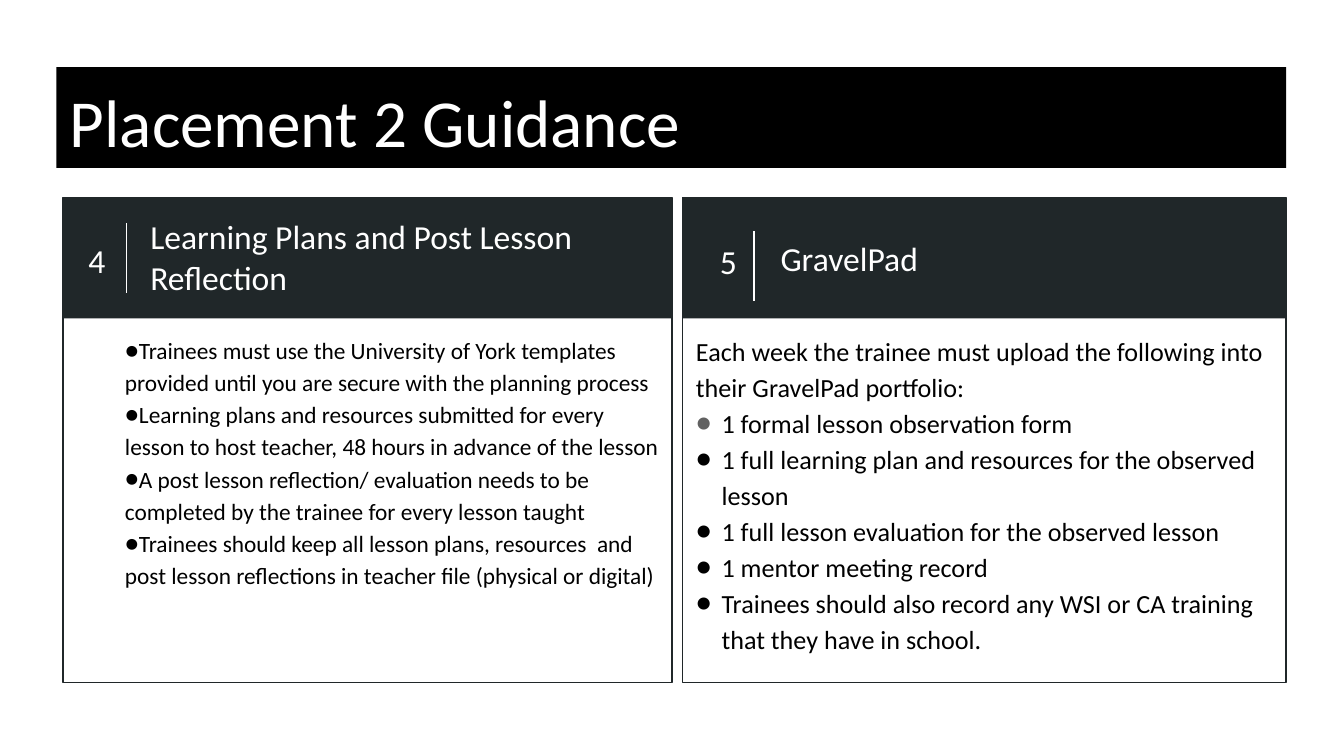
import pptx
import pptx.dml.color
import pptx.enum.shapes
import pptx.enum.text
import pptx.oxml.ns
import pptx.util
from lxml import etree
from pptx.util import Inches

COLOURS = {
    "black": "000000",
    "white": "FFFFFF",
    "slate": "202729",
    "grey": "616161",
}
ALIGN = pptx.enum.text.PP_ALIGN
ANCHOR = pptx.enum.text.MSO_ANCHOR
PANEL_TOP, PANEL_HEIGHT, HEADER_HEIGHT = 1.47, 3.61, 0.9

PANELS = [
    {
        "left": 0.47, "width": 4.53,
        "number": "4", "number_at": (0.53, 1.46, 0.38, HEADER_HEIGHT),
        "divider": (0.94, 1.66),
        "heading": "Learning Plans and Post Lesson Reflection",
        "heading_at": (1.02, 1.46, 3.98, HEADER_HEIGHT),
        "body_at": (0.56, 2.37, 4.44, 2.71),
        "body_size": 12.5, "body_inset": 0.37, "indent": (0, -0.21),
        "body": [
            ("Trainees must use the University of York templates provided "
             "until you are secure with the planning process", "black"),
            ("Learning plans and resources submitted for every lesson to host "
             "teacher, 48 hours in advance of the lesson", "black"),
            ("A post lesson reflection/ evaluation needs to be completed by "
             "the trainee for every lesson taught", "black"),
            ("Trainees should keep all lesson plans, resources  and post "
             "lesson reflections in teacher file (physical or digital)", "black"),
        ],
    },
    {
        "left": 5.08, "width": 4.49,
        "number": "5", "number_at": (5.23, 1.47, 0.38, HEADER_HEIGHT),
        "divider": (5.61, 1.72),
        "heading": "GravelPad",
        "heading_at": (5.71, 1.47, 2.3, HEADER_HEIGHT),
        "body_at": (5.08, 2.36, 4.49, 2.6),
        "body_size": 14, "body_inset": 0.1, "indent": (0.19, -0.22),
        "body": [
            ("Each week the trainee must upload the following into their "
             "GravelPad portfolio:", None),
            ("1 formal lesson observation form", "grey"),
            ("1 full learning plan and resources for the observed lesson", "black"),
            ("1 full lesson evaluation for the observed lesson", "black"),
            ("1 mentor meeting record", "black"),
            ("Trainees should also record any WSI or CA training that they "
             "have in school.", "black"),
        ],
    },
]


def rgb(name):
    return pptx.dml.color.RGBColor.from_string(COLOURS[name])


def box(numbers):
    return [Inches(number) for number in numbers]


def format_frame(frame, anchor=ANCHOR.TOP, left_inset=0.1):
    values = {
        "word_wrap": True,
        "auto_size": pptx.enum.text.MSO_AUTO_SIZE.NONE,
        "vertical_anchor": anchor,
        "margin_left": Inches(left_inset),
        "margin_top": Inches(0.1),
        "margin_right": Inches(0.1),
        "margin_bottom": Inches(0.1),
    }
    for name, value in values.items():
        setattr(frame, name, value)


def write(paragraph, text, size, colour, align=ALIGN.LEFT, spacing=1.0):
    paragraph.alignment = align
    paragraph.line_spacing = spacing
    run = paragraph.add_run()
    run.text = text
    run.font.name = "Calibri"
    run.font.size = pptx.util.Pt(size)
    run.font.color.rgb = rgb(colour)


def add_bullet(paragraph, colour, margin, indent):
    qn = pptx.oxml.ns.qn
    properties = paragraph._p.get_or_add_pPr()
    properties.set("marL", str(Inches(margin)))
    properties.set("indent", str(Inches(indent)))
    bullet_colour = etree.SubElement(properties, qn("a:buClr"))
    etree.SubElement(bullet_colour, qn("a:srgbClr"), val=COLOURS[colour])
    etree.SubElement(properties, qn("a:buFont"), typeface="Calibri")
    etree.SubElement(properties, qn("a:buChar"), char="●")


def add_title(slide, text):
    title = slide.shapes.title
    title.left, title.top, title.width, title.height = box((0.42, 0.5, 9.15, 0.75))
    title.fill.solid()
    title.fill.fore_color.rgb = rgb("black")
    format_frame(title.text_frame)
    write(title.text_frame.paragraphs[0], text, 36, "white")


def add_card(slide, left, width):
    """Group an outlined panel with the dark band along its top."""
    card = slide.shapes.add_group_shape()
    rectangle = pptx.enum.shapes.MSO_SHAPE.RECTANGLE
    outline, header = [
        card.shapes.add_shape(rectangle, *box((left, PANEL_TOP, width, height)))
        for height in (PANEL_HEIGHT, HEADER_HEIGHT)
    ]
    outline.shadow.inherit = header.shadow.inherit = False
    outline.fill.background()
    outline.line.color.rgb = rgb("slate")
    outline.line.width = pptx.util.Pt(0.75)
    header.fill.solid()
    header.fill.fore_color.rgb = rgb("slate")
    header.line.fill.background()


def add_divider(slide, x, top):
    divider = slide.shapes.add_connector(
        pptx.enum.shapes.MSO_CONNECTOR.STRAIGHT, *box((x, top, x, top + 0.52)))
    divider.line.color.rgb = rgb("white")
    divider.line.width = pptx.util.Pt(0.75)
    etree.SubElement(divider._element.spPr, pptx.oxml.ns.qn("a:effectLst"))


def add_label(slide, position, text, **paragraph_format):
    frame = slide.shapes.add_textbox(*box(position)).text_frame
    format_frame(frame, ANCHOR.MIDDLE)
    write(frame.paragraphs[0], text, 18, "white", **paragraph_format)


def add_body(slide, panel):
    frame = slide.shapes.add_textbox(*box(panel["body_at"])).text_frame
    format_frame(frame, left_inset=panel["body_inset"])
    for index, (text, bullet) in enumerate(panel["body"]):
        paragraph = frame.add_paragraph() if index else frame.paragraphs[0]
        write(paragraph, text, panel["body_size"], "black", spacing=1.15)
        if bullet:
            add_bullet(paragraph, bullet, *panel["indent"])


def main():
    presentation = pptx.Presentation()
    presentation.slide_width = Inches(10)
    presentation.slide_height = Inches(10) * 9 // 16
    slide = presentation.slides.add_slide(presentation.slide_layouts[5])
    add_title(slide, "Placement 2 Guidance")
    for panel in PANELS:
        add_card(slide, panel["left"], panel["width"])
        add_label(slide, panel["number_at"], panel["number"],
                  align=ALIGN.CENTER, spacing=1.15)
        add_divider(slide, *panel["divider"])
        add_label(slide, panel["heading_at"], panel["heading"])
        add_body(slide, panel)
    presentation.save("out.pptx")


if __name__ == "__main__":
    main()
